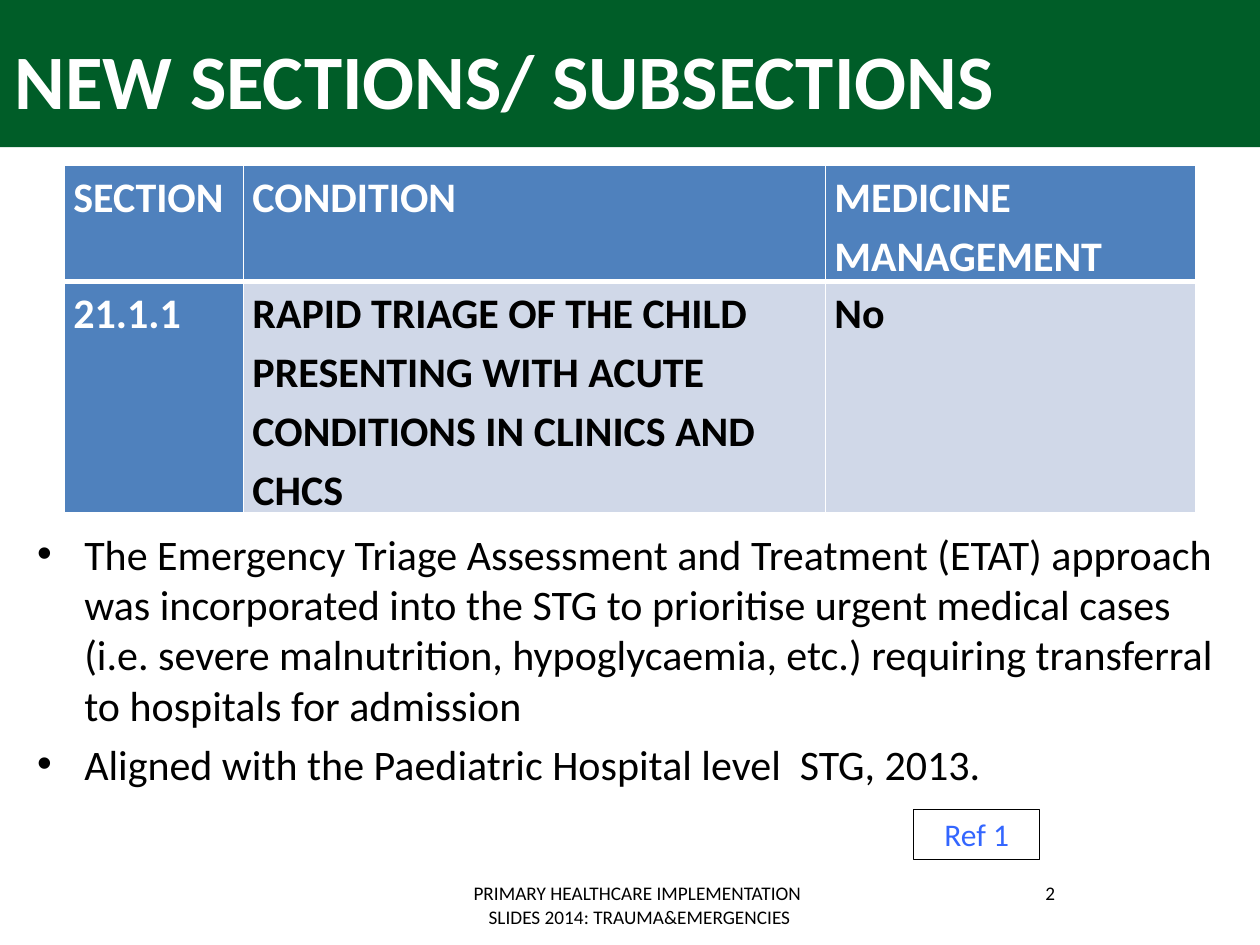
import pptx
import pptx.util
import pptx.dml.color
import pptx.enum.shapes
import pptx.enum.text
import pptx.oxml
import pptx.oxml.ns
import lxml.etree

Cm, Pt = pptx.util.Cm, pptx.util.Pt
RGBColor = pptx.dml.color.RGBColor
ALIGN = pptx.enum.text.PP_ALIGN
RECT = pptx.enum.shapes.MSO_SHAPE.RECTANGLE
qn = pptx.oxml.ns.qn

GREEN = RGBColor(0x00, 0x5D, 0x28)
BLUE = RGBColor(0x4F, 0x81, 0xBD)
PALE = RGBColor(0xD0, 0xD8, 0xE8)
LINK = RGBColor(0x33, 0x66, 0xFF)
WHITE = RGBColor(0xFF, 0xFF, 0xFF)
BLACK = RGBColor(0x00, 0x00, 0x00)

TITLE = "NEW SECTIONS/ SUBSECTIONS"
ROWS = [
    ["SECTION", "CONDITION", "MEDICINE MANAGEMENT"],
    ["21.1.1", "RAPID TRIAGE OF THE CHILD PRESENTING WITH ACUTE "
     "CONDITIONS IN CLINICS AND CHCS", "No"],
]
COL_WIDTHS = [3.61, 11.73, 7.47]
ROW_HEIGHTS = [2.34, 4.67]
BULLETS = [
    "The Emergency Triage Assessment and Treatment (ETAT) approach was "
    "incorporated into the STG to prioritise urgent medical cases (i.e. severe "
    "malnutrition, hypoglycaemia, etc.) requiring transferral to hospitals for admission",
    "Aligned with the Paediatric Hospital level  STG, 2013.",
]
FOOTER = ["PRIMARY HEALTHCARE IMPLEMENTATION ", "SLIDES 2014: TRAUMA&EMERGENCIES"]
PAGE = "2"
REFERENCE = "Ref 1"


def write(tf, lines, size, color=BLACK, bold=False, align=ALIGN.LEFT,
          spacing=None, before=None, bullet=False, wrap=True):
    tf.word_wrap = wrap
    for i, line in enumerate(lines):
        p = tf.paragraphs[0] if i == 0 else tf.add_paragraph()
        p.alignment = align
        p.line_spacing = spacing
        p.space_before = before
        if bullet:
            pPr = p._p.get_or_add_pPr()
            pPr.set("marL", str(Cm(0.95)))
            pPr.set("indent", str(-Cm(0.95)))
            lxml.etree.SubElement(pPr, qn("a:buFont"), typeface="Arial")
            lxml.etree.SubElement(pPr, qn("a:buChar"), char="•")
        r = p.add_run()
        r.text = line
        r.font.name = "Calibri"
        r.font.size = Pt(size)
        r.font.bold = bold
        r.font.color.rgb = color


def add_text(s, box, lines, size, **fmt):
    sp = s.shapes.add_textbox(*map(Cm, box))
    write(sp.text_frame, lines, size, **fmt)


def add_rect(s, box, fill=None, line=None):
    sp = s.shapes.add_shape(RECT, *map(Cm, box))
    sp.shadow.inherit = False
    if fill is None:
        sp.fill.background()
    else:
        sp.fill.solid()
        sp.fill.fore_color.rgb = fill
    if line is None:
        sp.line.fill.background()
    else:
        sp.line.color.rgb = line
        sp.line.width = Pt(0.25)
    return sp


def set_borders(cell, widths):
    tcPr = cell._tc.get_or_add_tcPr()
    for i, (side, width) in enumerate(widths.items()):
        ln = lxml.etree.Element(qn("a:ln" + side), w=str(Pt(width)))
        fill = lxml.etree.SubElement(ln, qn("a:solidFill"))
        lxml.etree.SubElement(fill, qn("a:srgbClr"), val=str(WHITE))
        tcPr.insert(i, ln)


def add_sections(s):
    tbl = s.shapes.add_table(len(ROWS), len(COL_WIDTHS), Cm(1.3), Cm(3.33),
                             Cm(sum(COL_WIDTHS)), Cm(sum(ROW_HEIGHTS))).table
    for col, width in zip(tbl.columns, COL_WIDTHS):
        col.width = Cm(width)
    for i, texts in enumerate(ROWS):
        tbl.rows[i].height = Cm(ROW_HEIGHTS[i])
        for j, text in enumerate(texts):
            cell = tbl.cell(i, j)
            heading = i == 0 or j == 0
            cell.margin_left = cell.margin_right = Cm(0.18)
            cell.margin_top = cell.margin_bottom = 0
            cell.fill.solid()
            cell.fill.fore_color.rgb = BLUE if heading else PALE
            set_borders(cell, {"L": 1, "R": 1, "T": 3 if i else 1, "B": 1 if i else 3})
            write(cell.text_frame, [text], 24, color=WHITE if heading else BLACK, bold=True,
                  align=ALIGN.LEFT if i and j == 1 else ALIGN.JUSTIFY, spacing=1.15)


def main():
    prs = pptx.Presentation()
    prs.slide_width, prs.slide_height = Cm(25.4), Cm(19.05)
    s = prs.slides.add_slide(prs.slide_layouts[6])
    add_rect(s, (0, 0, 25.4, 2.97), fill=GREEN)
    add_text(s, (8.13, 17.65, 9.53, 1.02), FOOTER, 11, align=ALIGN.CENTER)
    add_text(s, (18.21, 17.65, 5.92, 1.02), [PAGE], 11, align=ALIGN.CENTER)
    add_text(s, (0.05, 0.53, 20.45, 2.13), [TITLE], 44, color=WHITE, bold=True, wrap=False)
    add_sections(s)
    add_text(s, (0.5, 10.52, 24.41, 5.41), BULLETS, 24, before=Pt(4.8), bullet=True)
    ref = add_rect(s, (18.42, 16.31, 2.54, 1.02), line=BLACK)
    write(ref.text_frame, [REFERENCE], 18, color=LINK, align=ALIGN.CENTER)
    prs.save("out.pptx")


if __name__ == "__main__":
    main()
